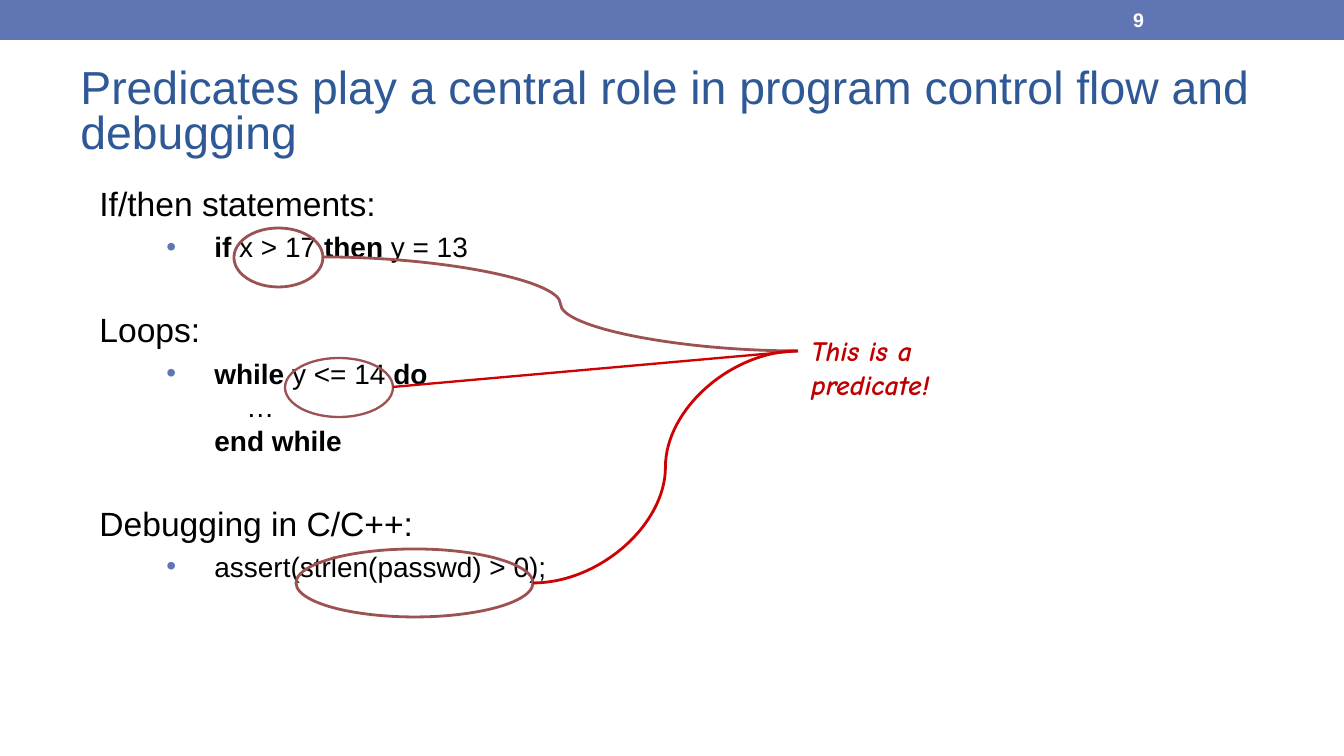
import pptx
import pptx.dml.color
import pptx.enum.shapes
import pptx.enum.text
import pptx.oxml.ns
import pptx.util
from lxml import etree

RGBColor = pptx.dml.color.RGBColor
MSO_SHAPE = pptx.enum.shapes.MSO_SHAPE
MSO_CONNECTOR = pptx.enum.shapes.MSO_CONNECTOR
ANCHOR = pptx.enum.text.MSO_ANCHOR
qn = pptx.oxml.ns.qn

BAND_BLUE = RGBColor(0x60, 0x76, 0xB4)
TITLE_BLUE = RGBColor(0x2F, 0x58, 0x97)
BROWN = RGBColor(0x9C, 0x52, 0x52)
RED = RGBColor(0xCE, 0x02, 0x02)
NOTE_RED = RGBColor(0xC0, 0x00, 0x00)
BLACK = RGBColor(0, 0, 0)
WHITE = RGBColor(0xFF, 0xFF, 0xFF)

PAGE_WIDTH, PAGE_HEIGHT = 1344, 756
LINE_GAP = 3.6
SECTION_GAP = 24.5
NOTE_POINT = (798, 351)


def px(length):
    return pptx.util.Emu(round(length * 914400 / 134.4))


class PageBuilder:
    font = "Arial"

    def __init__(self, deck):
        self.page = deck.slides.add_slide(deck.slide_layouts[1])
        self.shapes = self.page.shapes

    def place(self, box, left, top, width, height, anchor=ANCHOR.TOP):
        box.left, box.top = px(left), px(top)
        box.width, box.height = px(width), px(height)
        frame = box.text_frame
        frame.word_wrap = True
        frame.auto_size = pptx.enum.text.MSO_AUTO_SIZE.NONE
        frame.vertical_anchor = anchor
        return frame

    def span(self, para, text, size, color=BLACK, bold=False, italic=False, font=None):
        span = para.add_run()
        span.text = text
        span.font.name = font or self.font
        span.font.size = pptx.util.Pt(size)
        span.font.bold, span.font.italic = bold, italic
        span.font.color.rgb = color

    def band(self, left, top, width, height, color):
        box = self.shapes.add_shape(MSO_SHAPE.RECTANGLE, px(left), px(top), px(width), px(height))
        box.shadow.inherit = False
        box.fill.solid()
        box.fill.fore_color.rgb = color
        box.line.fill.background()

    def title(self, text, *area):
        para = self.place(self.shapes.title, *area, anchor=ANCHOR.MIDDLE).paragraphs[0]
        para.alignment = pptx.enum.text.PP_ALIGN.LEFT
        para.line_spacing = 0.8
        self.span(para, text, 24.8, TITLE_BLUE)

    def body(self, sections, *area):
        self.frame = self.place(self.page.placeholders[1], *area)
        self.started = False
        for heading, lines in sections:
            gap = SECTION_GAP if self.started else LINE_GAP
            self.body_line([(heading, False)], 18, 0, 67, gap)
            for index, (indent, spans) in enumerate(lines):
                first = index == 0
                self.body_line(spans, 15, 1, 134 + indent, LINE_GAP if first else 0, first)

    def body_line(self, spans, size, level, margin, gap, bullet=False):
        para = self.frame.add_paragraph() if self.started else self.frame.paragraphs[0]
        self.started = True
        para.level = level
        para.space_before = pptx.util.Pt(gap)
        properties = para._p.get_or_add_pPr()
        properties.set("marL", str(px(margin)))
        properties.set("indent", str(px(-48 if bullet or level == 0 else 0)))
        if bullet:
            color = etree.SubElement(properties, qn("a:buClr"))
            etree.SubElement(color, qn("a:srgbClr"), val=str(BAND_BLUE))
            etree.SubElement(properties, qn("a:buFont"), typeface=self.font)
            etree.SubElement(properties, qn("a:buChar"), char="•")
        else:
            etree.SubElement(properties, qn("a:buNone"))
        for text, bold in spans:
            self.span(para, text, size, bold=bold)

    def ring(self, left, top, width, height, weight):
        ring = self.shapes.add_shape(MSO_SHAPE.OVAL, px(left), px(top), px(width), px(height))
        ring.shadow.inherit = False
        ring.fill.background()
        ring.line.color.rgb = BROWN
        ring.line.width = pptx.util.Pt(weight)

    def link(self, kind, start, end, color, weight):
        link = self.shapes.add_connector(kind, *map(px, start + end))
        link.line.color.rgb = color
        link.line.width = pptx.util.Pt(weight)
        etree.SubElement(link._element.spPr, qn("a:effectLst"))

    def label(self, text, area, anchor=ANCHOR.TOP, right_inset=13, **style):
        frame = self.place(self.shapes.add_textbox(0, 0, 0, 0), *area, anchor=anchor)
        frame.margin_right = px(right_inset)
        self.span(frame.paragraphs[0], text, bold=True, **style)


SECTIONS = [
    ("If/then statements:", [
        (0, [("if", True), (" x > 17 ", False), ("then", True), (" y = 13", False)]),
    ]),
    ("Loops:", [
        (0, [("while", True), (" y <= 14 ", False), ("do", True)]),
        (32, [("…", False)]),
        (0, [("end while", True)]),
    ]),
    ("Debugging in C/C++:", [
        (0, [("assert(strlen(passwd) > 0);", False)]),
    ]),
]

PREDICATES = [
    ((234, 228, 89, 59), 1.5, MSO_CONNECTOR.CURVE, BROWN),
    ((285, 358, 108, 59), 1.25, MSO_CONNECTOR.STRAIGHT, RED),
    ((296, 549, 237, 68), 1.5, MSO_CONNECTOR.CURVE, RED),
]


def main():
    deck = pptx.Presentation()
    deck.slide_width, deck.slide_height = px(PAGE_WIDTH), px(PAGE_HEIGHT)
    page = PageBuilder(deck)
    page.band(0, 0, PAGE_WIDTH, 40, BAND_BLUE)
    page.title("Predicates play a central role in program control flow and debugging",
               67, 59, 1210, 109)
    page.body(SECTIONS, 67, 176, 1210, 538)
    for area, weight, kind, color in PREDICATES:
        left, top, width, height = area
        page.ring(*area, weight)
        page.link(kind, (left + width, top + height // 2), NOTE_POINT, color, weight)
    page.label("This is a predicate!", (798, 327, 246, 80), right_inset=100,
               size=15, color=NOTE_RED, italic=True, font="Comic Neue")
    page.label("9", (1120, 2, 157, 36), anchor=ANCHOR.MIDDLE, size=10.5, color=WHITE)
    deck.save("out.pptx")


if __name__ == "__main__":
    main()
